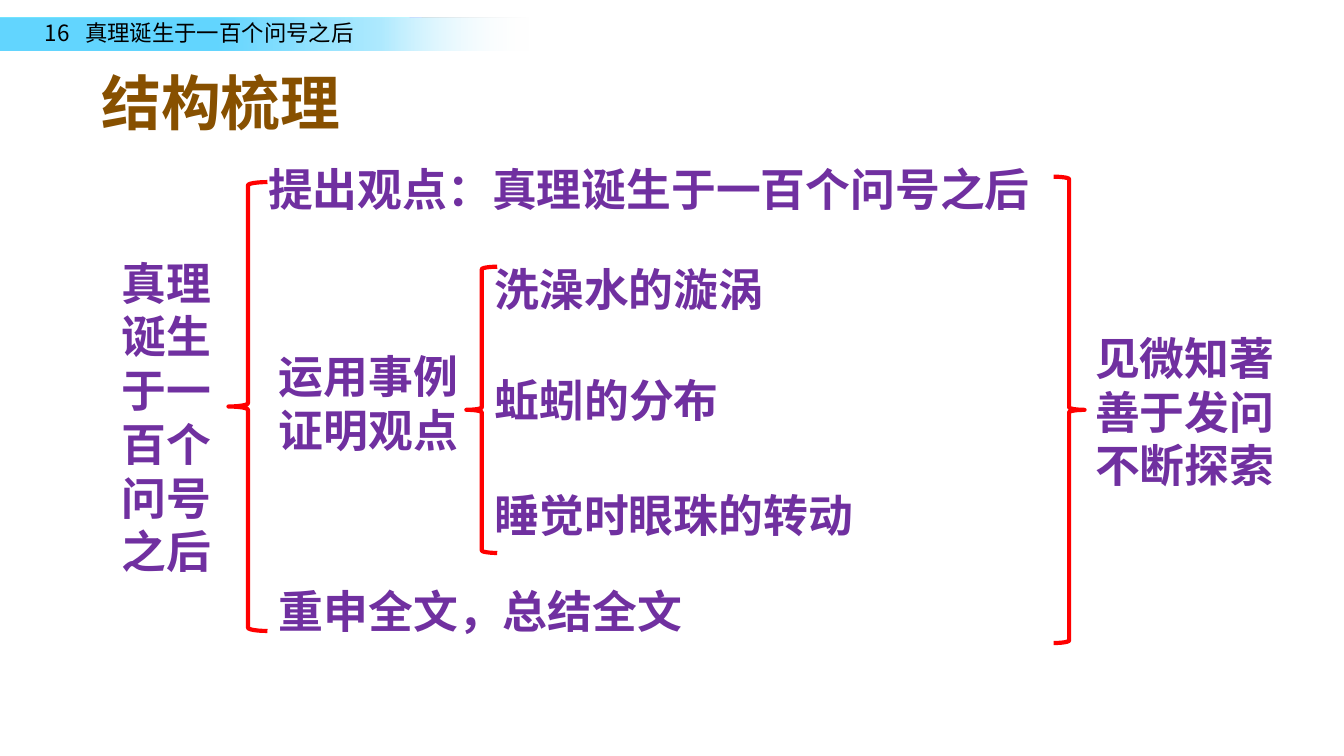
from dataclasses import dataclass

from lxml.etree import SubElement
from pptx import Presentation
from pptx.dml.color import RGBColor
from pptx.enum.shapes import MSO_SHAPE
from pptx.enum.text import MSO_AUTO_SIZE, PP_ALIGN
from pptx.oxml.ns import qn
from pptx.slide import Slide
from pptx.util import Emu, Pt

PX = 4572


@dataclass(frozen=True)
class Theme:
    """Colours, fonts and type sizes of the slide."""

    black: str = "000000"
    purple: str = "7030A0"
    brown: str = "875000"
    red: str = "FF0000"
    band_stops: tuple = ((40, "63D6FF", 100), (70, "97E4FF", 76), (97, "FFFFFF", 0))
    text_font: str = "Noto Sans CJK SC"
    title_font: str = "Roboto"
    header_size: int = 12
    body_size: int = 24
    title_size: int = 32
    brace_width: float = 2.25


THEME = Theme()


@dataclass(frozen=True)
class Box:
    """A rectangle in px."""

    left: int
    top: int
    width: int
    height: int

    def emu(self) -> tuple:
        """Return the rectangle in EMU."""
        return tuple(Emu(n * PX) for n in (self.left, self.top, self.width, self.height))


@dataclass(frozen=True)
class Label:
    """A block of text in one style."""

    box: Box
    lines: tuple
    size: int = THEME.body_size
    color: str = THEME.purple
    font: str = THEME.text_font
    bold: bool = True
    align: PP_ALIGN = PP_ALIGN.LEFT
    inset: tuple = (15, 8)
    tab: int = 0


@dataclass(frozen=True)
class Brace:
    """A curly brace that groups labels."""

    box: Box
    preset: MSO_SHAPE = MSO_SHAPE.LEFT_BRACE


HEADER = Label(Box(47, 18, 606, 60), ("16\t真理诞生于一百个问号之后",), THEME.header_size,
               THEME.black, bold=False, inset=(20, 10), tab=60)
TITLE = Label(Box(136, 90, 486, 122), ("结构梳理",), THEME.title_size, THEME.brown, THEME.title_font)
OUTLINE = (
    Label(Box(166, 372, 176, 500), ("真理诞生于一百个问号之后",)),
    Label(Box(384, 232, 1208, 96), ("提出观点：真理诞生于一百个问号之后",)),
    Label(Box(400, 511, 316, 176), ("运用事例证明观点",)),
    Label(Box(400, 860, 680, 96), ("重申全文，总结全文",)),
    Label(Box(721, 381, 448, 96), ("洗澡水的漩涡",)),
    Label(Box(721, 546, 516, 96), ("蚯蚓的分布",)),
    Label(Box(721, 718, 626, 96), ("睡觉时眼珠的转动",)),
    Label(Box(1598, 484, 330, 258), ("见微知著", "善于发问", "不断探索"), align=PP_ALIGN.CENTER),
)
BRACES = (
    Brace(Box(340, 271, 58, 668)),
    Brace(Box(694, 397, 46, 426)),
    Brace(Box(1568, 263, 46, 694), MSO_SHAPE.RIGHT_BRACE),
)


def draw_band(slide: Slide, box: Box) -> None:
    """Draw the header band that fades out to the right."""
    band = slide.shapes.add_shape(MSO_SHAPE.RECTANGLE, *box.emu())
    band.shadow.inherit = False
    band.line.fill.background()
    band.fill.gradient()
    band.fill.gradient_angle = 0
    stops = band._element.spPr.find(".//" + qn("a:gsLst"))
    for stop in list(stops):
        stops.remove(stop)
    for position, color, opacity in THEME.band_stops:
        stop = SubElement(stops, qn("a:gs"), pos=str(position * 1000))
        tint = SubElement(stop, qn("a:srgbClr"), val=color)
        SubElement(tint, qn("a:alpha"), val=str(opacity * 1000))


def draw_label(slide: Slide, label: Label) -> None:
    """Draw a text block, one paragraph for each line."""
    frame = slide.shapes.add_textbox(*label.box.emu()).text_frame
    frame.word_wrap = True
    frame.auto_size = MSO_AUTO_SIZE.SHAPE_TO_FIT_TEXT
    side, end = (Emu(n * PX) for n in label.inset)
    frame.margin_left = frame.margin_right = side
    frame.margin_top = frame.margin_bottom = end
    frame.text = "\n".join(label.lines)
    for paragraph in frame.paragraphs:
        paragraph.alignment = label.align
        properties = paragraph._p.get_or_add_pPr()
        if label.tab:
            tabs = SubElement(properties, qn("a:tabLst"))
            SubElement(tabs, qn("a:tab"), pos=str(label.tab * PX), algn="l")
        font = paragraph.font
        font.size = Pt(label.size)
        font.bold = label.bold
        font.color.rgb = RGBColor.from_string(label.color)
        font.name = label.font
        SubElement(properties.find(qn("a:defRPr")), qn("a:ea"), typeface=label.font)


def draw_brace(slide: Slide, brace: Brace) -> None:
    """Draw an unfilled brace."""
    outline = slide.shapes.add_shape(brace.preset, *brace.box.emu())
    outline.shadow.inherit = False
    outline.fill.background()
    outline.line.color.rgb = RGBColor.from_string(THEME.red)
    outline.line.width = Pt(THEME.brace_width)


def main() -> None:
    """Build the slide and save it."""
    deck = Presentation()
    deck.slide_width, deck.slide_height = Emu(2000 * PX), Emu(1125 * PX)
    slide = deck.slides.add_slide(deck.slide_layouts[6])
    draw_band(slide, Box(0, 27, 812, 48))
    for label in (HEADER, TITLE, *OUTLINE):
        draw_label(slide, label)
    for brace in BRACES:
        draw_brace(slide, brace)
    deck.save("out.pptx")


if __name__ == "__main__":
    main()
